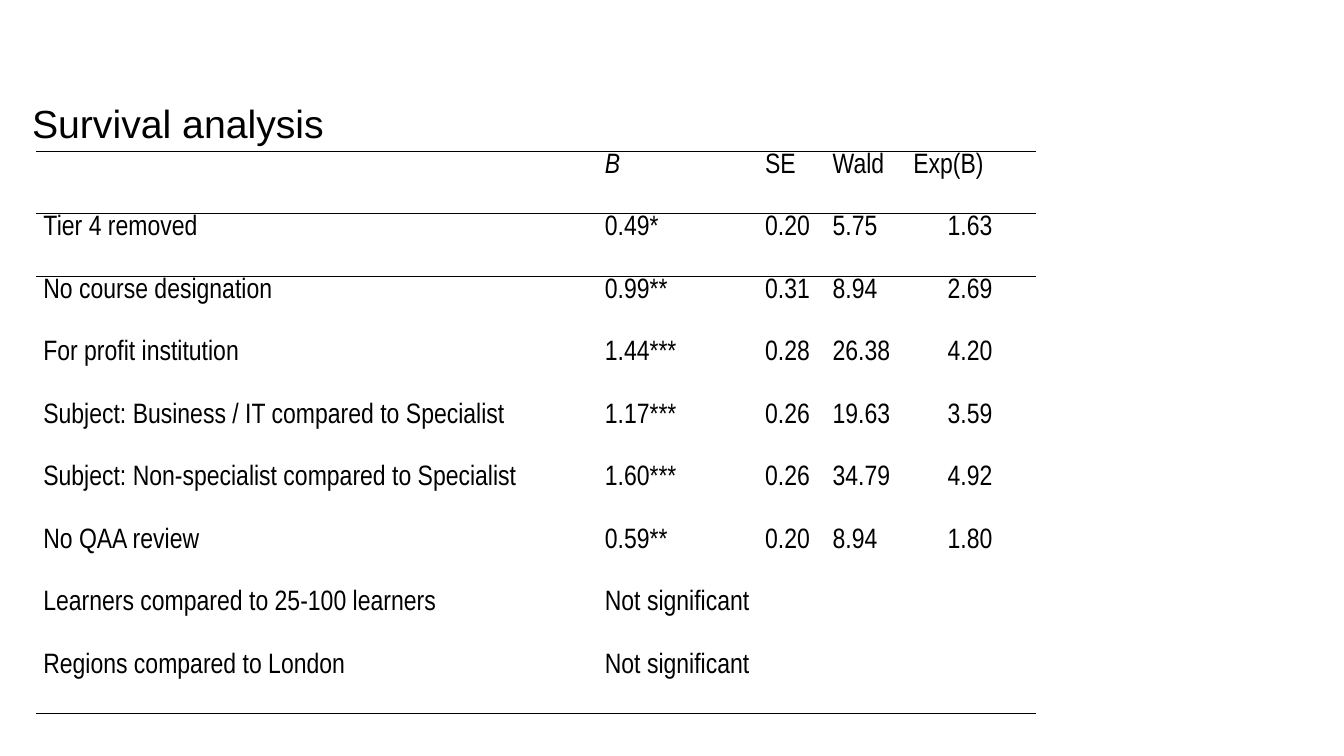
from lxml.etree import SubElement
from pptx import Presentation
from pptx.dml.color import RGBColor
from pptx.enum.text import MSO_ANCHOR
from pptx.oxml.ns import qn
from pptx.util import Inches, Pt

BLACK = RGBColor(0x00, 0x00, 0x00)
NO_STYLE_NO_GRID = "{2D5ABB26-0587-4C30-8999-92F81FD0307C}"

COLUMN_WIDTHS = [5.57, 1.59, 0.67, 0.8, 0.34, 0.95]
ROW_HEIGHT = 0.62
HEADER = ["", "B", "SE", "Wald", "Exp(B)", ""]
RESULTS = [
    ["Tier 4 removed", "0.49*", "0.20", "5.75", "", "1.63"],
    ["No course designation", "0.99**", "0.31", "8.94", "", "2.69"],
    ["For profit institution", "1.44***", "0.28", "26.38", "", "4.20"],
    ["Subject: Business / IT compared to Specialist", "1.17***", "0.26", "19.63", "", "3.59"],
    ["Subject: Non-specialist compared to Specialist", "1.60***", "0.26", "34.79", "", "4.92"],
    ["No QAA review", "0.59**", "0.20", "8.94", "", "1.80"],
    ["Learners compared to 25-100 learners", "Not significant", "", "", "", ""],
    ["Regions compared to London", "Not significant", "", "", "", ""],
]


def write_text(text_frame, text, font="Arial Narrow", size=20, italic=False, spacing=1.07):
    paragraph = text_frame.paragraphs[0]
    paragraph.line_spacing = spacing
    run = paragraph.add_run()
    run.text = text
    run.font.name = font
    run.font.size = Pt(size)
    run.font.italic = italic
    run.font.color.rgb = BLACK


def add_border(cell, side):
    """Draw a 1 pt black rule on one side of a cell: "lnT" or "lnB"."""
    line = SubElement(cell._tc.get_or_add_tcPr(), qn(f"a:{side}"), w=str(Pt(1)))
    fill = SubElement(line, qn("a:solidFill"))
    SubElement(fill, qn("a:srgbClr"), val=str(BLACK))


presentation = Presentation()
presentation.slide_width = Inches(13.33)
presentation.slide_height = Inches(7.5)
slide = presentation.slides.add_slide(presentation.slide_layouts[6])

title = slide.shapes.add_textbox(Inches(0.22), Inches(0.73), Inches(3.47), Inches(1.04))
title.text_frame.word_wrap = True
title.text_frame.vertical_anchor = MSO_ANCHOR.MIDDLE
write_text(title.text_frame, "Survival analysis", font="Arial", size=28, spacing=0.9)

rows = [HEADER] + RESULTS
last_row = len(rows) - 1
table_frame = slide.shapes.add_table(
    len(rows), len(COLUMN_WIDTHS), Inches(0.36), Inches(1.5),
    Inches(sum(COLUMN_WIDTHS)), Inches(ROW_HEIGHT * len(rows)))
table = table_frame.table
table.first_row = False
table.horz_banding = False
table._tbl.tblPr.find(qn("a:tableStyleId")).text = NO_STYLE_NO_GRID

for column, width in zip(table.columns, COLUMN_WIDTHS):
    column.width = Inches(width)

for row_index, values in enumerate(rows):
    table.rows[row_index].height = Inches(ROW_HEIGHT)
    # The narrow column joins Exp(B) in the header and Wald in the results.
    merge_start = 4 if row_index == 0 else 3
    table.cell(row_index, merge_start).merge(table.cell(row_index, merge_start + 1))
    for column_index, value in enumerate(values):
        cell = table.cell(row_index, column_index)
        cell.margin_left = cell.margin_right = Inches(0.07)
        cell.margin_top = cell.margin_bottom = 0
        if row_index in (0, 1):
            add_border(cell, "lnT")
        if row_index in (0, last_row):
            add_border(cell, "lnB")
        cell.fill.background()
        if value:
            write_text(cell.text_frame, value, italic=value == "B")

presentation.save("out.pptx")
